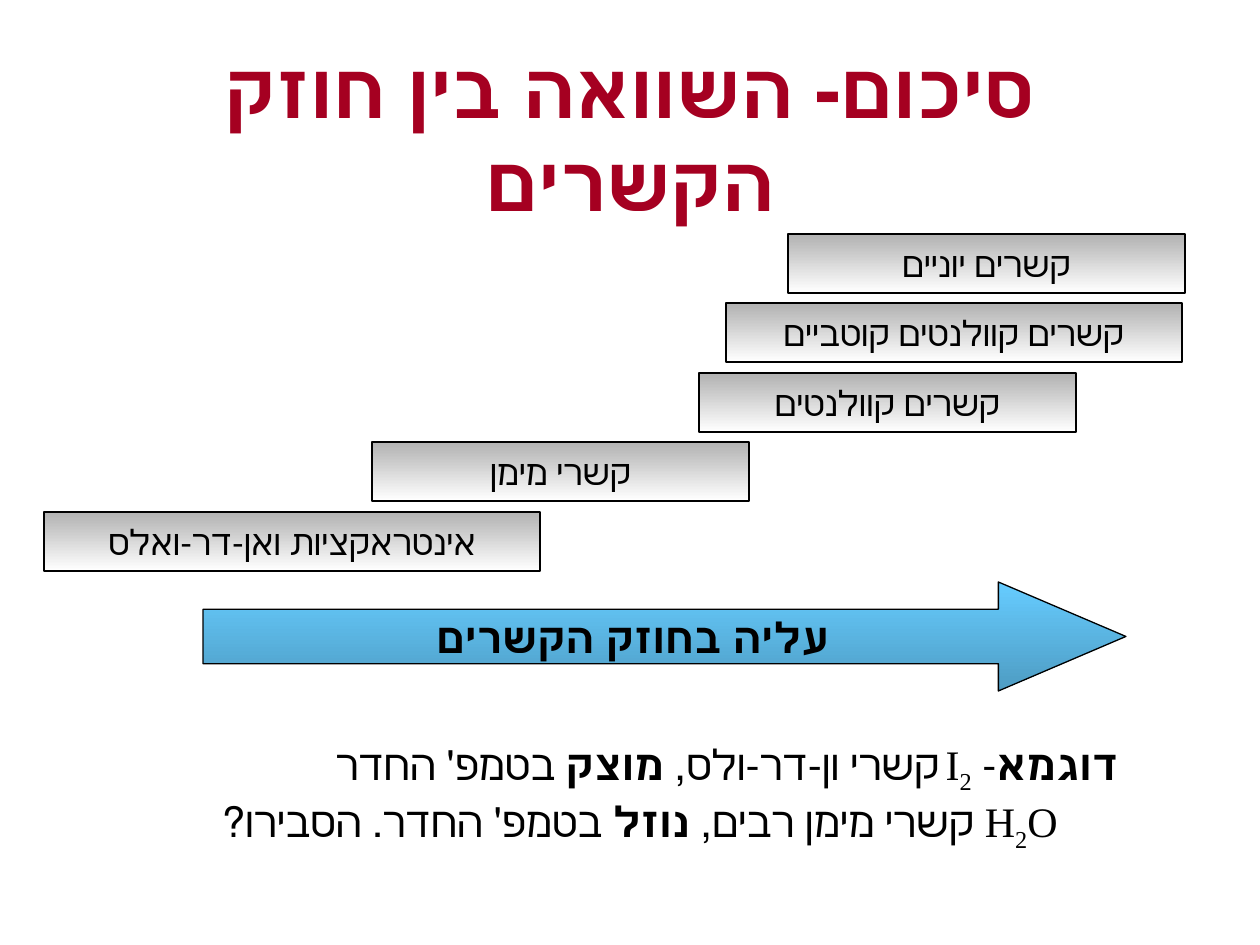
from pptx import Presentation
from pptx import util as u
from pptx.dml.color import RGBColor
from pptx.enum import shapes, text

PX = u.Inches(1) // 126
FONT = "Times New Roman"
COLORS = {"title": "A50021", "ink": "000000", "gray": "B2B2B2", "white": "FFFFFF",
          "sky": "66CCFF", "steel": "4E9CC3"}


def style(p, size, color="ink", align=text.PP_ALIGN.CENTER):
    """Align a right-to-left paragraph and format its runs."""
    p.alignment = align
    p._p.get_or_add_pPr().set("rtl", "1")
    for r in p.runs:
        r.font.size = u.Pt(size)
        r.font.name = FONT
        r.font.color.rgb = RGBColor.from_string(COLORS[color])


def add_label(s, kind, box, label, size, top_color, bottom_color):
    """Add an outlined shape with a vertical gradient and a centred label."""
    sp = s.shapes.add_shape(kind, *[v * PX for v in box])
    sp.shadow.inherit = False
    sp.fill.gradient()
    sp.fill.gradient_angle = 270
    for stop, name in zip(sp.fill.gradient_stops, (top_color, bottom_color)):
        stop.color.rgb = RGBColor.from_string(COLORS[name])
    sp.line.color.rgb = RGBColor.from_string(COLORS["ink"])
    sp.line.width = u.Pt(0.75)
    tf = sp.text_frame
    tf.text = label
    tf.word_wrap = False
    tf.vertical_anchor = text.MSO_ANCHOR.MIDDLE
    style(tf.paragraphs[0], size)
    return sp


prs = Presentation()
prs.slide_width, prs.slide_height = 1260 * PX, 945 * PX
s = prs.slides.add_slide(prs.slide_layouts[6])

# Title
tf = s.shapes.add_textbox(95 * PX, 55 * PX, 1071 * PX, 158 * PX).text_frame
tf.word_wrap = True
tf.vertical_anchor = text.MSO_ANCHOR.MIDDLE
tf.text = "סיכום- השוואה בין חוזק הקשרים"
style(tf.paragraphs[0], 44, "title")
tf.paragraphs[0].runs[0].font.bold = True

# Bond types, strongest first
bonds = [
    (788, 397, "קשרים יוניים"),
    (726, 456, "קשרים קוולנטים קוטביים"),
    (699, 377, "קשרים קוולנטים"),
    (372, 377, "קשרי מימן"),
    (44, 496, "אינטראקציות ואן-דר-ואלס"),
]
for i, (left, width, label) in enumerate(bonds):
    add_label(s, shapes.MSO_SHAPE.RECTANGLE, (left, 234 + round(69.4 * i), width, 59),
              label, 20, "gray", "white")

# Strength arrow
arrow = add_label(s, shapes.MSO_SHAPE.RIGHT_ARROW, (203, 582, 923, 109),
                  "עליה בחוזק הקשרים", 24, "sky", "steel")
arrow.adjustments[0], arrow.adjustments[1] = 0.5, 1.17
arrow.text_frame.paragraphs[0].runs[0].font.bold = True

# Examples: (text, bold, subscript)
examples = [
    [("דוגמא", True, False), ("- I", False, False), ("2 ", False, True),
     ("קשרי ון-דר-ולס, ", False, False), ("מוצק", True, False),
     (" בטמפ' החדר", False, False)],
    [("H", False, False), ("2", False, True), ("O קשרי מימן רבים, ", False, False),
     ("נוזל", True, False), (" בטמפ' החדר. הסבירו?", False, False)],
]
tf = s.shapes.add_textbox(129 * PX, 732 * PX, 1002 * PX, 165 * PX).text_frame
tf.word_wrap = True
for i, parts in enumerate(examples):
    p = tf.paragraphs[0] if i == 0 else tf.add_paragraph()
    for part, bold, subscript in parts:
        r = p.add_run()
        r.text = part
        r.font.bold = bold
        if subscript:
            r.font._element.set("baseline", "-25000")
    style(p, 24, align=text.PP_ALIGN.RIGHT)
# The second example is indented from its right-hand start
p._p.get_or_add_pPr().set("marL", str(61 * PX))

prs.save("out.pptx")
